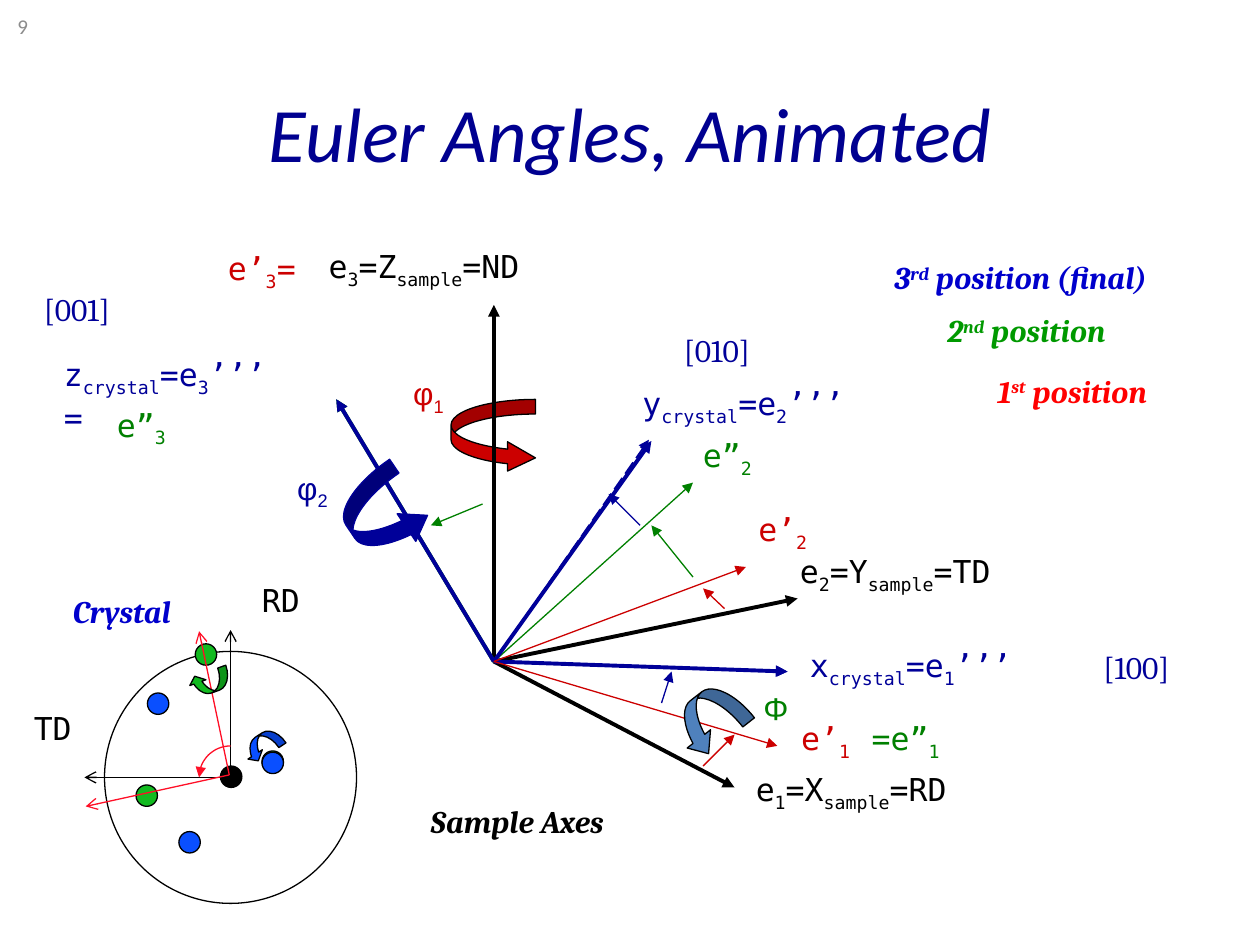
"""Build the Euler angles slide: sample axes, rotated crystal axes and a pole figure."""
import math

import pptx
import pptx.dml.color
import pptx.enum.dml
import pptx.enum.shapes
import pptx.enum.text
import pptx.oxml
import pptx.oxml.ns
import pptx.util

Inches, Pt = pptx.util.Inches, pptx.util.Pt
SHAPE = pptx.enum.shapes.MSO_SHAPE
MONO, SERIF, SANS = "DejaVu Sans Mono", "Cambria", "Arial"
BLACK, NAVY, GREEN, RED = "000000", "000099", "008000", "CC0000"
BLUE, LIME, SCARLET = "0A4FFF", "12BA20", "FF0F27"
ORIGIN, POLE = (3.92, 5.25), (1.83, 6.17)
RED_POLE = (1.82, 6.15)
Z_TIP, X_TIP = (2.67, 3.17), (6.25, 5.33)
DOT = 0.17

# fmt: off
AXES = [
    (X_TIP, NAVY, 1, True), ((5.15, 3.49), NAVY, 1, True), (Z_TIP, NAVY, 1, True),
    ((3.92, 2.42), BLACK, 2.25, False), ((6.33, 4.75), BLACK, 2.25, False),
    ((5.83, 6.25), BLACK, 2.25, False),
    ((5.5, 3.83), GREEN, 0.75, False), (Z_TIP, GREEN, 2.25, False),
    ((5.17, 3.5), NAVY, 2.25, False), (X_TIP, NAVY, 2.25, False), (Z_TIP, NAVY, 2.25, False),
    ((6.17, 5.92), RED, 0.75, False), ((5.92, 4.5), RED, 0.75, False),
]
POLE_LINES = [(POLE, (1.83, 5), BLACK), (POLE, (0.67, 6.17), BLACK)]
RED_POLE_LINES = [(RED_POLE, (1.58, 5.01), SCARLET), (RED_POLE, (0.68, 6.4), SCARLET)]
TURNS = [
    ((5.58, 6.08), (5.83, 5.83), RED), ((5.75, 4.83), (5.58, 4.67), RED),
    ((5.5, 4.58), (5.17, 4.17), GREEN), ((3.83, 4), (3.42, 4.17), GREEN),
    ((5.08, 4.17), (4.83, 3.92), NAVY), ((5.25, 5.58), (5.33, 5.33), NAVY),
]
DOTS = [
    (1.75, 6.08, BLACK),
    (2.08, 5.96, LIME), (1.08, 6.23, LIME), (1.55, 5.11, LIME),
    (1.17, 5.5, BLUE), (1.42, 6.6, BLUE), (2.08, 5.97, BLUE),
]
RIGHT, LEFT = SHAPE.CURVED_RIGHT_ARROW, SHAPE.CURVED_LEFT_ARROW
PHI1_ARROW = (RIGHT, (3.58, 3.17, 0.67, 0.58), 0, (0.2, 0.4, 0.381), RED, BLACK)
CURVED_ARROWS = [
    (RIGHT, (5.42, 5.42, 0.42, 0.58), 52, (0.28, 0.56, 0.333), "4F81BD", BLACK),
    (LEFT, (1.58, 5.25, 0.17, 0.33), 70.4, (0.4, 0.8, 0.333), LIME, BLACK),
    (RIGHT, (2.75, 3.75, 0.58, 0.67), 325.9, (0.229, 0.457, 0.333), NAVY, NAVY),
    (RIGHT, (2, 5.75, 0.17, 0.33), 57, (0.4, 0.8, 0.333), BLUE, BLACK),
]
LABELS = [
    (5.33, 2.58, 1, "[010]", SERIF, NAVY), (8.66, 5.09, 1, "[100]", SERIF, NAVY),
    (0.25, 2.25, 1, "[001]", SERIF, NAVY),
    (5.9, 6.06, 2.34, "e_1_=X_sample_=RD", MONO, BLACK),
    (6.25, 4.33, 2.34, "e_2_=Y_sample_=TD", MONO, BLACK),
    (2.51, 1.91, 2.34, "e_3_=Z_sample_=ND", MONO, BLACK),
    (1.98, 4.56, 0.6, "RD", MONO, BLACK), (0.17, 5.58, 0.6, "TD", MONO, BLACK),
    (5.48, 3.41, 0.73, "e”_2", MONO, GREEN), (0.83, 3.17, 0.73, "e”_3", MONO, GREEN),
    (6.82, 5.66, 0.93, "=e”_1", MONO, GREEN),
    (5, 3, 2.47, "y_crystal_=e_2_’’’", MONO, NAVY),
    (6.33, 5.08, 2.47, "x_crystal_=e_1_’’’", MONO, NAVY),
    (0.41, 2.77, 2.47, "z_crystal_=e_3_’’’\n=", MONO, NAVY),
    (6.26, 5.66, 0.73, "e’_1", MONO, RED), (5.92, 4, 0.73, "e’_2", MONO, RED),
    (1.71, 1.93, 0.93, "e’_3_=", MONO, RED),
    (3.18, 2.92, 0.49, "φ_1", SANS, RED), (2.26, 3.67, 0.49, "φ_2", SANS, NAVY),
    (5.96, 5.42, 0.46, "Φ", SANS, GREEN),
]
HEADINGS = [
    (0.48, 4.65, 1.3, "Crystal", "0000CC"), (3.32, 6.32, 2.16, "Sample Axes", BLACK),
    (7, 2, 3.05, "3^rd^ position (final)", "0000CC"),
    (7.42, 2.42, 2.04, "2^nd^ position", "009900"),
    (7.82, 2.9, 1.96, "1^st^ position", "FF0000"),
]
# fmt: on


def rgb(color):
    return pptx.dml.color.RGBColor.from_string(color)


def style_run(r, font, size, color, bold=False, italic=False):
    r.font.name, r.font.size = font, Pt(size)
    r.font.bold, r.font.italic = bold, italic
    r.font.color.rgb = rgb(color)


def add_label(s, x, y, w, text, font, color, size=18, emphasis=False):
    lines = text.split("\n")
    sp = s.shapes.add_textbox(*map(Inches, (x, y, w, 0.1 + 0.4 * len(lines))))
    tf = sp.text_frame
    tf.word_wrap = True
    p = tf.paragraphs[0]
    mark, shift = ("^", 30000) if "^" in text else ("_", -25000)
    for n, line in enumerate(lines):
        if n:
            p.add_line_break()
        for i, part in enumerate(line.split(mark)):
            if not part:
                continue
            r = p.add_run()
            r.text = part
            style_run(r, font, size, color, emphasis, emphasis)
            if i % 2:
                r.font._element.set("baseline", str(shift))
    return tf


def add_arrowhead(sp, head):
    ln = sp.line._get_or_add_ln()
    tail = pptx.oxml.parse_xml(f'<a:tailEnd {pptx.oxml.ns.nsdecls("a")} type="{head}"/>')
    ln.append(tail)


def add_line(s, start, end, color, width=0.75, dashed=False, head="triangle"):
    straight = pptx.enum.shapes.MSO_CONNECTOR.STRAIGHT
    sp = s.shapes.add_connector(straight, *map(Inches, start + end))
    sp.line.color.rgb, sp.line.width = rgb(color), Pt(width)
    if dashed:
        sp.line.dash_style = pptx.enum.dml.MSO_LINE.LONG_DASH
    add_arrowhead(sp, head)
    effects = pptx.oxml.parse_xml(f'<a:effectLst {pptx.oxml.ns.nsdecls("a")}/>')
    sp._element.spPr.append(effects)


def paint(sp, fill, line):
    sp.shadow.inherit = False
    if fill:
        sp.fill.solid()
        sp.fill.fore_color.rgb = rgb(fill)
    else:
        sp.fill.background()
    sp.line.color.rgb, sp.line.width = rgb(line), Pt(0.75)


def add_shape(s, kind, box, rotation=0, adjustments=(), fill=None, line=BLACK):
    sp = s.shapes.add_shape(kind, *map(Inches, box))
    sp.rotation = rotation
    for i, value in enumerate(adjustments):
        sp.adjustments[i] = value
    paint(sp, fill, line)


def add_arc(s, center, radius, color, steps=16):
    angles = [math.pi / 2 * (1 + i / steps) for i in range(steps + 1)]
    points = [
        (Inches(center[0] + radius * math.cos(a)), Inches(center[1] - radius * math.sin(a)))
        for a in angles
    ]
    builder = s.shapes.build_freeform(*points[0])
    builder.add_line_segments(points[1:], close=False)
    sp = builder.convert_to_shape()
    paint(sp, None, color)
    add_arrowhead(sp, "triangle")


def add_title(s, text):
    sp = s.shapes.title
    sp.left, sp.top, sp.width, sp.height = map(Inches, (0.75, 0.42, 8.5, 1.25))
    tf = sp.text_frame
    tf.text = text
    tf.vertical_anchor = pptx.enum.text.MSO_ANCHOR.MIDDLE
    tf.paragraphs[0].alignment = pptx.enum.text.PP_ALIGN.CENTER
    style_run(tf.paragraphs[0].runs[0], "Calibri", 44, "000090", italic=True)


def main():
    prs = pptx.Presentation()
    prs.slide_width, prs.slide_height = Inches(10), Inches(7.5)
    s = prs.slides.add_slide(prs.slide_layouts[5])
    add_title(s, "Euler Angles, Animated")
    add_label(s, 0.04, 0.06, 0.78, "9", "Calibri", "8C8C8C", size=12)

    add_shape(s, *PHI1_ARROW)
    add_shape(s, SHAPE.OVAL, (POLE[0] - 1, POLE[1] - 1, 2, 2))
    for start, end, color in POLE_LINES:
        add_line(s, start, end, color, head="arrow")
    for x, y, color in DOTS:
        add_shape(s, SHAPE.OVAL, (x, y, DOT, DOT), fill=color)
    for tip, color, width, dashed in AXES:
        add_line(s, ORIGIN, tip, color, width, dashed)
    for start, end, color in RED_POLE_LINES:
        add_line(s, start, end, color, head="arrow")
    add_arc(s, POLE, 0.25, SCARLET)
    for arrow in CURVED_ARROWS:
        add_shape(s, *arrow)
    for turn in TURNS:
        add_line(s, *turn)
    for label in LABELS:
        add_label(s, *label)
    for x, y, w, text, color in HEADINGS:
        add_label(s, x, y, w, text, SERIF, color, emphasis=True)
    prs.save("out.pptx")


if __name__ == "__main__":
    main()
